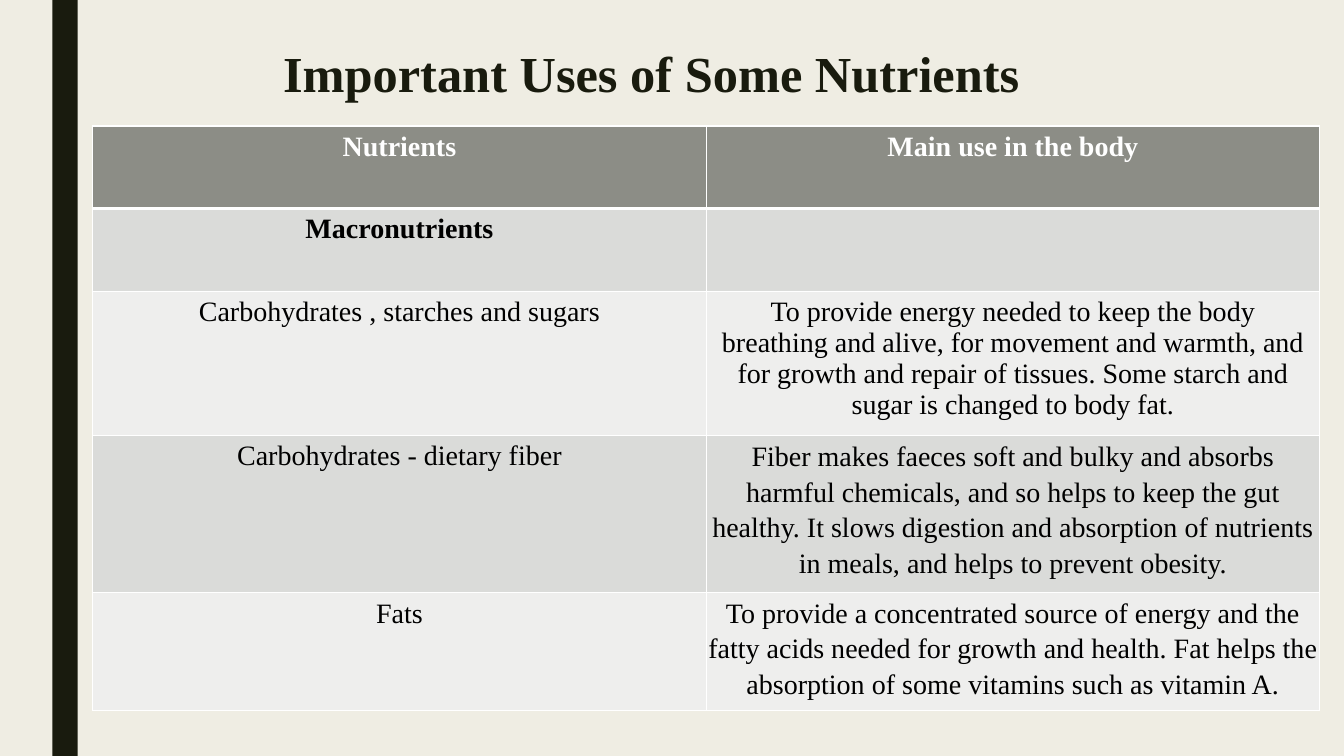
from lxml.etree import SubElement
from pptx import Presentation
from pptx.dml.color import RGBColor
from pptx.enum.shapes import MSO_SHAPE as Shape
from pptx.enum.text import MSO_ANCHOR as Anchor, PP_ALIGN as Align
from pptx.oxml import parse_xml
from pptx.oxml.ns import nsdecls, qn
from pptx.util import Inches, Pt

FONT = "Times New Roman"
COLORS = {
    "background": "EFEDE3", "dark": "191B0E", "header": "8C8D86",
    "band": "DADBD9", "light": "EEEEED", "white": "FFFFFF", "black": "000000",
}
WIDTH, HEIGHT = 13.33, 7.5
LEFT = 0.92
ROW_HEIGHTS = [0.82, 0.82, 1.37, 1.43, 1.09]
TIGHT_CELLS = {(3, 1), (4, 0), (4, 1)}
NUTRIENTS = [
    ("Nutrients", "Main use in the body"),
    ("Macronutrients", ""),
    ("Carbohydrates , starches and sugars",
     "To provide energy needed to keep the body breathing and alive, for movement "
     "and warmth, and for growth and repair of tissues. Some starch and sugar is "
     "changed to body fat."),
    ("Carbohydrates - dietary fiber",
     "Fiber makes faeces soft and bulky and absorbs harmful chemicals, and so helps "
     "to keep the gut healthy. It slows digestion and absorption of nutrients in "
     "meals, and helps to prevent obesity."),
    ("Fats",
     "To provide a concentrated source of energy and the fatty acids needed for "
     "growth and health. Fat helps the absorption of some vitamins such as vitamin A."),
]


def rgb(name):
    """Return the named colour."""
    return RGBColor.from_string(COLORS[name])


def style_text(paragraph, size, color, bold):
    """Centre a paragraph and set its font."""
    paragraph.alignment = Align.CENTER
    font = paragraph.font
    font.name, font.size, font.bold = FONT, Pt(size), bold
    font.color.rgb = rgb(color)
    for run in paragraph.runs:
        run.font.name, run.font.size, run.font.bold = FONT, Pt(size), bold
        run.font.color.rgb = rgb(color)


def add_side_bar(slide, left, top, width, height):
    """Draw the dark vertical bar."""
    bar = slide.shapes.add_shape(
        Shape.RECTANGLE, Inches(left), Inches(top), Inches(width), Inches(height))
    bar.shadow.inherit = False
    bar.fill.solid()
    bar.fill.fore_color.rgb = rgb("dark")
    bar.line.fill.background()


def add_title(slide, left, top, width, height):
    """Place the centred heading near the top of its box."""
    heading = slide.shapes.add_textbox(
        Inches(left), Inches(top), Inches(width), Inches(height)).text_frame
    heading.word_wrap = True
    heading.vertical_anchor = Anchor.TOP
    heading.margin_top = Inches(0.24)
    heading.text = "Important Uses of Some Nutrients"
    heading.paragraphs[0].line_spacing = 0.89
    style_text(heading.paragraphs[0], 36, "dark", True)


def set_borders(cell, top, bottom):
    """Give a cell white borders, with top and bottom widths in points."""
    properties = cell._tc.get_or_add_tcPr()
    sides = {"lnL": 1, "lnR": 1, "lnT": top, "lnB": bottom}
    for position, (side, points) in enumerate(sides.items()):
        border = parse_xml(f'<a:{side} {nsdecls("a")} w="{Pt(points)}"/>')
        fill = SubElement(border, qn("a:solidFill"))
        SubElement(fill, qn("a:srgbClr"), val=COLORS["white"])
        properties.insert(position, border)


def fill_cell(cell, text, row, column):
    """Write and style one cell by its place in the table."""
    cell.text = text
    paragraph = cell.text_frame.paragraphs[0]
    if (row, column) in TIGHT_CELLS:
        cell.margin_left = cell.margin_right = Inches(0.01)
        cell.margin_top = cell.margin_bottom = Inches(0.01)
        paragraph.line_spacing = 1.15
        paragraph.space_after = Pt(10)
    style_text(paragraph, 20, "black" if row else "white", row < 2)
    cell.fill.solid()
    shade = "header" if row == 0 else "band" if row % 2 else "light"
    cell.fill.fore_color.rgb = rgb(shade)
    set_borders(cell, 3 if row == 1 else 1, 3 if row == 0 else 1)


def add_nutrient_table(slide, left, top, width):
    """Build the table of nutrients and their uses in two equal columns."""
    table = slide.shapes.add_table(
        len(NUTRIENTS), 2, Inches(left), Inches(top),
        Inches(width), Inches(sum(ROW_HEIGHTS))).table
    for row, (uses, height) in enumerate(zip(NUTRIENTS, ROW_HEIGHTS)):
        table.rows[row].height = Inches(height)
        for column, text in enumerate(uses):
            fill_cell(table.cell(row, column), text, row, column)


def main():
    """Build and save the slide."""
    deck = Presentation()
    deck.slide_width, deck.slide_height = Inches(WIDTH), Inches(HEIGHT)
    slide = deck.slides.add_slide(deck.slide_layouts[6])
    slide.background.fill.solid()
    slide.background.fill.fore_color.rgb = rgb("background")
    add_side_bar(slide, 0.52, 0, 0.25, HEIGHT)
    add_title(slide, LEFT, 0.25, 11.08, 1.62)
    add_nutrient_table(slide, LEFT, 1.25, 12.17)
    deck.save("out.pptx")


if __name__ == "__main__":
    main()
